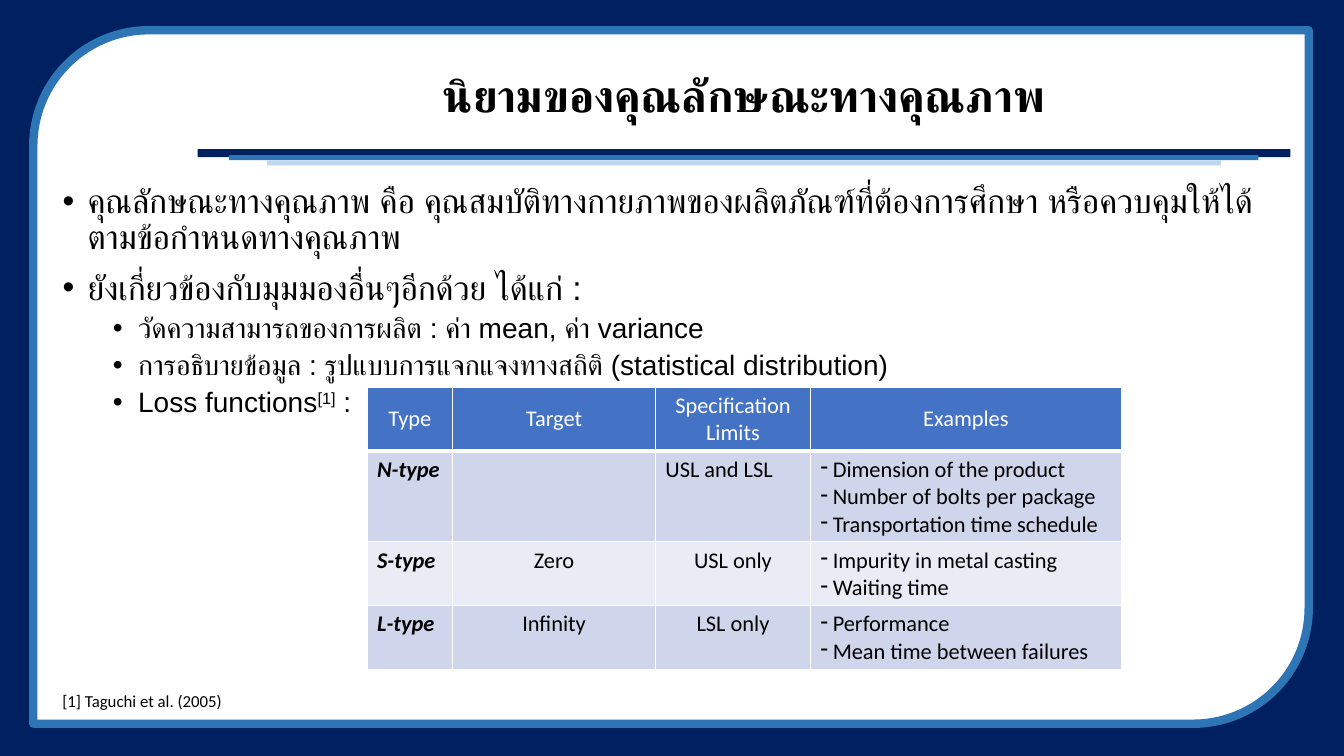
from dataclasses import dataclass

from lxml import etree
from pptx import Presentation
from pptx.dml.color import RGBColor
from pptx.enum.shapes import MSO_SHAPE
from pptx.enum.text import MSO_ANCHOR, PP_ALIGN
from pptx.oxml.ns import qn
from pptx.util import Inches, Pt

RECT = MSO_SHAPE.RECTANGLE
FRAME = MSO_SHAPE.ROUND_2_DIAG_RECTANGLE
LEFT, CENTER = PP_ALIGN.LEFT, PP_ALIGN.CENTER
TOP, MIDDLE = MSO_ANCHOR.TOP, MSO_ANCHOR.MIDDLE

NAVY, BLUE, PALE = "002060", "2E75B6", "BDD7EE"
WHITE, BLACK = "FFFFFF", "000000"
HEAD, BANDS = "4472C4", ("CFD5EA", "E9EBF5")


@dataclass
class Panel:
    left: float
    top: float
    width: float
    height: float
    fill: str
    kind: int = RECT
    line: str = ""


@dataclass
class Item:
    texts: tuple[str, ...]  # every second text is superscript
    level: int = 0


@dataclass
class Row:
    cells: tuple[str, ...]
    height: float


PANELS = [
    Panel(0, 0, 13.33, 7.5, NAVY),
    Panel(0.33, 0.3, 12.65, 6.88, WHITE, FRAME, BLUE),
    Panel(1.96, 1.48, 10.84, 0.08, NAVY),
    Panel(2.27, 1.54, 10.21, 0.05, BLUE),
    Panel(2.65, 1.59, 9.46, 0.05, PALE),
]
ITEMS = [
    Item(("คุณลักษณะทางคุณภาพ คือ คุณสมบัติทางกายภาพของผลิตภัณฑ์ที่ต้องการศึกษา "
          "หรือควบคุมให้ได้ตามข้อกำหนดทางคุณภาพ",)),
    Item(("ยังเกี่ยวข้องกับมุมมองอื่นๆอีกด้วย ได้แก่ :",)),
    Item(("วัดความสามารถของการผลิต : ค่า mean, ค่า variance",), 1),
    Item(("การอธิบายข้อมูล : รูปแบบการแจกแจงทางสถิติ (statistical distribution)",), 1),
    Item(("Loss functions", "[1]", " :"), 1),
]
WIDTHS = (0.85, 2.01, 1.54, 3.08)
ROWS = [
    Row(("Type", "Target", "Specification\nLimits", "Examples"), 0.63),
    Row(("N-type", "", "USL and LSL",
         "Dimension of the product\nNumber of bolts per package\n"
         "Transportation time schedule"), 0.9),
    Row(("S-type", "Zero", "USL only", "Impurity in metal casting\nWaiting time"), 0.63),
    Row(("L-type", "Infinity", "LSL only",
         "Performance\nMean time between failures"), 0.63),
]


def rgb(code: str) -> RGBColor:
    return RGBColor.from_string(code)


def style(run, size: float, face: str, color: str = BLACK,
          bold: bool = False, slant: bool = False) -> None:
    font = run.font
    font.size, font.name = Pt(size), face
    font.bold, font.italic = bold, slant
    font.color.rgb = rgb(color)
    # Thai letters take the complex-script face
    etree.SubElement(font._element, qn("a:cs"), typeface=face)


def bullet(para, char: str, left: float, hang: float) -> None:
    props = para._p.get_or_add_pPr()
    props.set("marL", str(Inches(left)))
    props.set("indent", str(-Inches(hang)))
    etree.SubElement(props, qn("a:buChar"), char=char)


def place(shape, left: float, top: float, width: float, height: float) -> None:
    shape.left, shape.top = Inches(left), Inches(top)
    shape.width, shape.height = Inches(width), Inches(height)


def draw_panel(slide, panel: Panel) -> None:
    shape = slide.shapes.add_shape(
        panel.kind, Inches(panel.left), Inches(panel.top),
        Inches(panel.width), Inches(panel.height))
    shape.shadow.inherit = False
    shape.fill.solid()
    shape.fill.fore_color.rgb = rgb(panel.fill)
    if panel.line:
        shape.line.color.rgb = rgb(panel.line)
        shape.line.width = Pt(6)
    else:
        shape.line.fill.background()


def fill_title(title) -> None:
    place(title, 1.96, 0.49, 10.84, 0.97)
    frame = title.text_frame
    frame.text = "นิยามของคุณลักษณะทางคุณภาพ"
    frame.vertical_anchor = MIDDLE
    para = frame.paragraphs[0]
    para.alignment, para.line_spacing = CENTER, 0.9
    style(para.runs[0], 32, "Arial", bold=True)


def fill_body(body) -> None:
    place(body, 0.52, 1.78, 12.28, 4.71)
    frame = body.text_frame
    for i, item in enumerate(ITEMS):
        para = frame.add_paragraph() if i else frame.paragraphs[0]
        para.level, para.line_spacing = item.level, 0.9
        para.space_before = Pt((5 if item.level else 10) if i else 0)
        bullet(para, "•", 0.25 + 0.5 * item.level, 0.25)
        for j, text in enumerate(item.texts):
            run = para.add_run()
            run.text = text
            style(run, 20 if item.level else 24, "Arial")
            if j % 2:
                run.font._element.set("baseline", "30000")


def edge(cell, head: bool) -> None:
    """Draw white borders, thicker below the header."""
    props = cell._tc.get_or_add_tcPr()
    for i, side in enumerate("LRTB"):
        width = Pt(3 if head and side == "B" else 1)
        line = etree.Element(qn(f"a:ln{side}"), w=str(width))
        fill = etree.SubElement(line, qn("a:solidFill"))
        etree.SubElement(fill, qn("a:srgbClr"), val=WHITE)
        props.insert(i, line)


def fill_cell(cell, text: str, r: int, c: int) -> None:
    head = r == 0
    cell.text = text
    cell.vertical_anchor = MIDDLE if head else TOP
    cell.fill.solid()
    cell.fill.fore_color.rgb = rgb(HEAD if head else BANDS[(r - 1) % 2])
    edge(cell, head)
    mid = head or (r > 1 and c in (1, 2))
    name = not head and c == 0
    for para in cell.text_frame.paragraphs:
        para.alignment = CENTER if mid else LEFT
        if not head and c == 3:
            bullet(para, "-", 0.12, 0.12)
        for run in para.runs:
            style(run, 16, "Calibri", WHITE if head else BLACK, name, name)


def draw_table(slide) -> None:
    table = slide.shapes.add_table(
        len(ROWS), len(WIDTHS), Inches(3.64), Inches(3.84),
        Inches(sum(WIDTHS)), Inches(sum(row.height for row in ROWS))).table
    for col, width in zip(table.columns, WIDTHS):
        col.width = Inches(width)
    for r, row in enumerate(ROWS):
        table.rows[r].height = Inches(row.height)
        for c, text in enumerate(row.cells):
            fill_cell(table.cell(r, c), text, r, c)


def draw_note(slide) -> None:
    box = slide.shapes.add_textbox(Inches(0.52), Inches(6.8), Inches(1.95), Inches(0.3))
    box.text_frame.text = "[1] Taguchi et al. (2005)"
    style(box.text_frame.paragraphs[0].runs[0], 12, "Calibri")


def main() -> None:
    deck = Presentation()
    deck.slide_width, deck.slide_height = Inches(13.33), Inches(7.5)
    slide = deck.slides.add_slide(deck.slide_layouts[1])
    title, body = slide.placeholders
    for panel in PANELS:
        draw_panel(slide, panel)
    # Bring the placeholders in front of the panels
    for holder in (title, body):
        slide.shapes._spTree.append(holder._element)
    fill_title(title)
    fill_body(body)
    draw_note(slide)
    draw_table(slide)
    deck.save("out.pptx")


if __name__ == "__main__":
    main()
